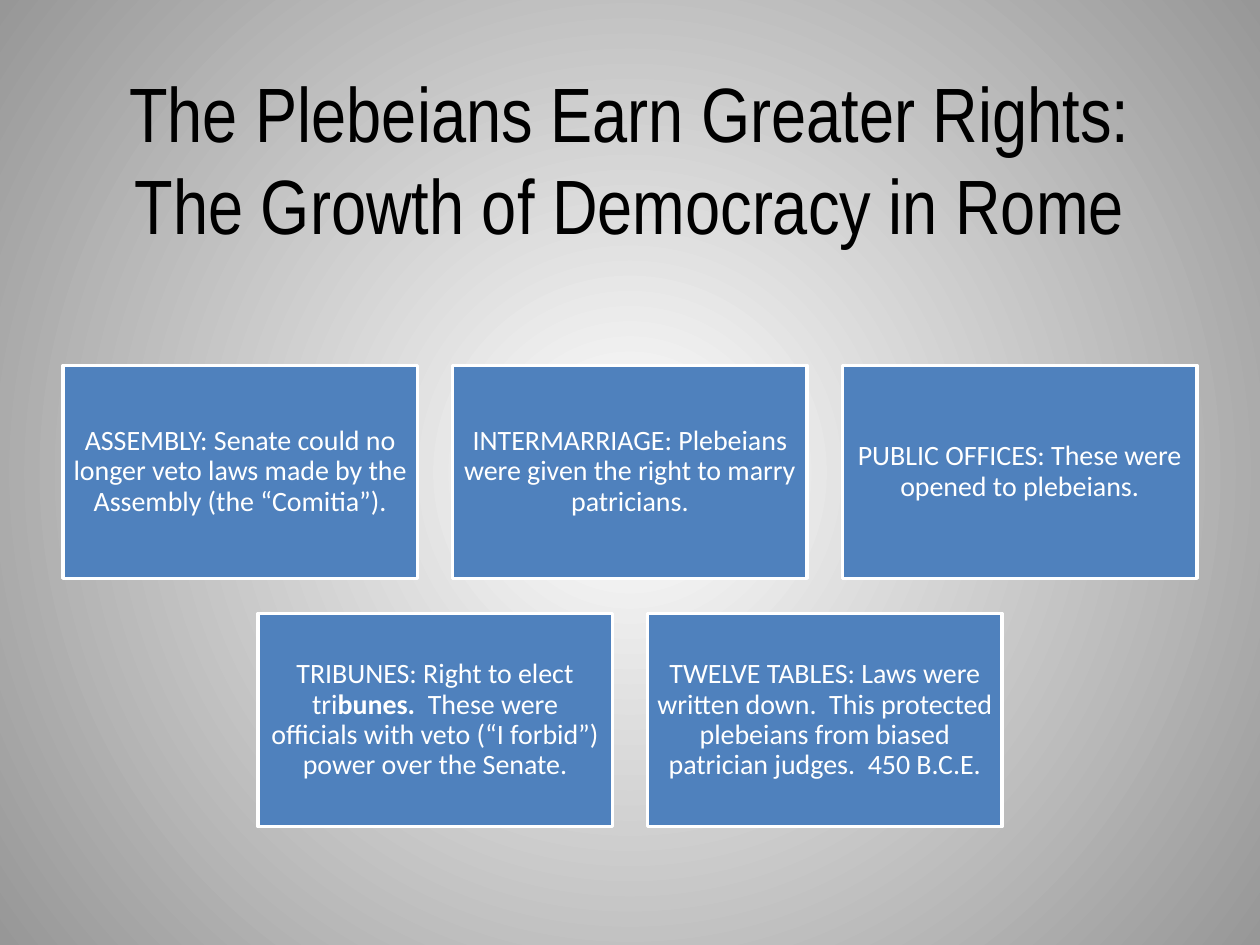
from lxml.etree import SubElement
from pptx import Presentation
from pptx.dml.color import RGBColor
from pptx.enum.shapes import MSO_SHAPE
from pptx.enum.text import MSO_ANCHOR, MSO_AUTO_SIZE, PP_ALIGN
from pptx.oxml.ns import qn
from pptx.util import Inches, Pt

COLORS = {"ink": "000000", "box": "4F81BD", "white": "FFFFFF", "edge": "979797"}
TITLE = "The Plebeians Earn Greater Rights:\nThe Growth of Democracy in Rome"
ROWS = [
    [
        "ASSEMBLY: Senate could no longer veto laws made by the Assembly (the “Comitia”).",
        "INTERMARRIAGE: Plebeians were given the right to marry patricians.",
        "PUBLIC OFFICES: These were opened to plebeians.",
    ],
    [
        "TRIBUNES: Right to elect tri*bunes.  *These were officials with veto "
        "(“I forbid”) power over the Senate.",
        "TWELVE TABLES: Laws were written down.  This protected plebeians from "
        "biased patrician judges.  450 B.C.E.",
    ],
]


def rgb(name):
    """Return the named color."""
    return RGBColor.from_string(COLORS[name])


def write(frame, text, font="Calibri", size=16, color="white", inset=0.07, space=0.9):
    """Fill a frame with centered text; asterisks enclose bold words."""
    frame.word_wrap = True
    frame.auto_size = MSO_AUTO_SIZE.NONE
    frame.vertical_anchor = MSO_ANCHOR.MIDDLE
    frame.margin_left = frame.margin_right = Inches(inset)
    frame.margin_top = frame.margin_bottom = Inches(inset)
    para = frame.paragraphs[0]
    para.alignment = PP_ALIGN.CENTER
    para.line_spacing = space
    for row, line in enumerate(text.split("\n")):
        if row:
            para.add_line_break()
        for part, words in enumerate(line.split("*")):
            run = para.add_run()
            run.text = words
            run.font.name = font
            run.font.size = Pt(size)
            run.font.bold = part % 2 == 1
            run.font.color.rgb = rgb(color)


def paint(slide):
    """Give the slide a round gradient that darkens from its center."""
    fill = slide.background.fill
    fill.gradient()
    for stop, name in zip(fill.gradient_stops, ("white", "edge")):
        stop.color.rgb = rgb(name)
    grad = slide.element.find(".//" + qn("a:gradFill"))
    grad.remove(grad.find(qn("a:lin")))
    path = SubElement(grad, qn("a:path"), path="circle")
    SubElement(path, qn("a:fillToRect"), l="50000", t="50000", r="50000", b="50000")


def head(slide, left, top, width, height):
    """Place the title in the given box."""
    title = slide.shapes.title
    title.left, title.top = Inches(left), Inches(top)
    title.width, title.height = Inches(width), Inches(height)
    write(title.text_frame, TITLE, font="Arial Narrow", size=44, color="ink",
          inset=0.05, space=1.0)


def card(slide, text, left, top, width, height):
    """Draw one right won by the plebeians."""
    box = slide.shapes.add_shape(MSO_SHAPE.RECTANGLE, Inches(left), Inches(top),
                                 Inches(width), Inches(height))
    box.shadow.inherit = False
    box.fill.solid()
    box.fill.fore_color.rgb = rgb("box")
    box.line.color.rgb = rgb("white")
    box.line.width = Pt(2)
    write(box.text_frame, text)


def grid(slide, left, top, width, height, gap=0.28):
    """Lay out the rows of cards, each row centered in the given box."""
    most = max(len(row) for row in ROWS)
    wide = (width - gap * (most - 1)) / most
    tall = (height - gap * (len(ROWS) - 1)) / len(ROWS)
    for line, row in enumerate(ROWS):
        start = left + (most - len(row)) * (wide + gap) / 2
        for col, text in enumerate(row):
            card(slide, text, start + col * (wide + gap),
                 top + line * (tall + gap), wide, tall)


def main():
    """Build and save the slide."""
    deck = Presentation()
    deck.slide_width, deck.slide_height = Inches(10), Inches(7.5)
    slide = deck.slides.add_slide(deck.slide_layouts[5])
    paint(slide)
    head(slide, 0.5, 0, 9, 2.5)
    grid(slide, 0.5, 2.9, 9, 3.66)
    deck.save("out.pptx")


if __name__ == "__main__":
    main()
